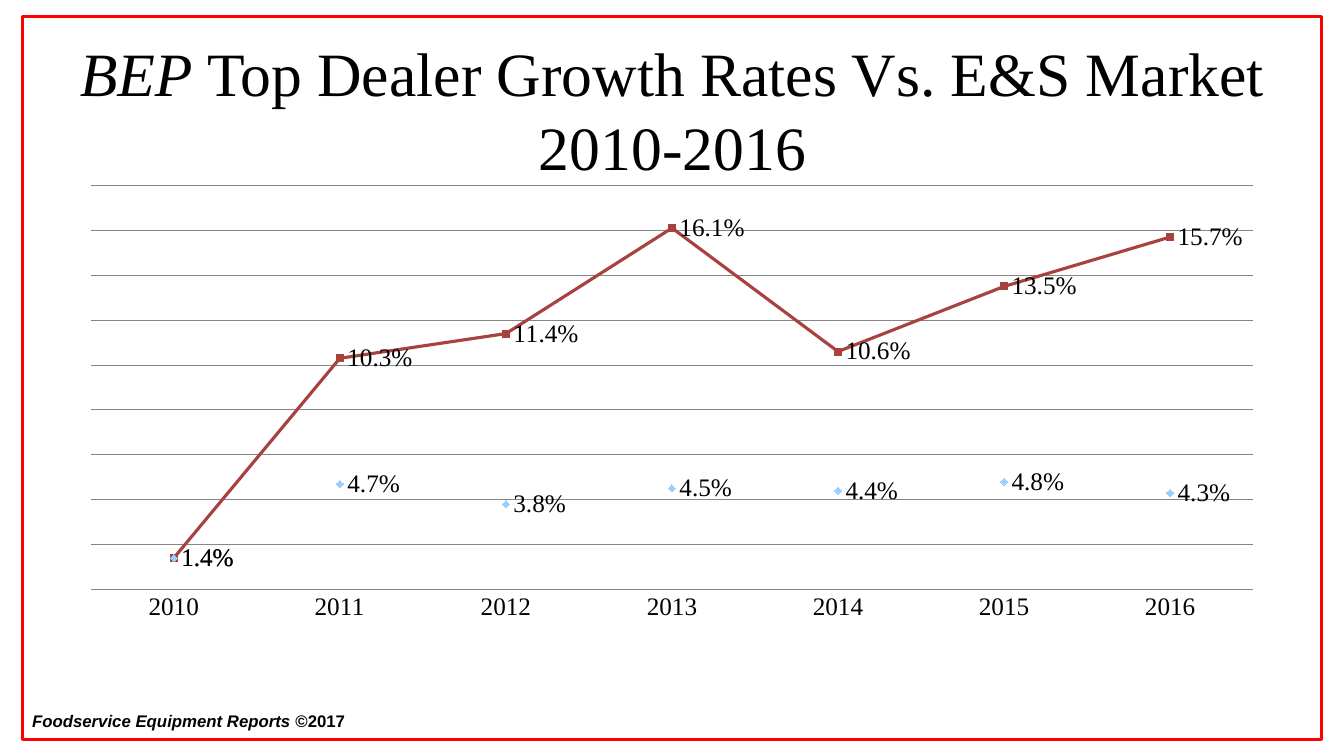
from dataclasses import dataclass

from pptx import Presentation
from pptx.chart.data import CategoryChartData
from pptx.dml.color import RGBColor
from pptx.enum.chart import XL_CHART_TYPE, XL_LABEL_POSITION, XL_MARKER_STYLE, XL_TICK_MARK
from pptx.enum.shapes import MSO_SHAPE
from pptx.enum.text import MSO_ANCHOR, MSO_AUTO_SIZE, PP_ALIGN
from pptx.oxml import parse_xml
from pptx.oxml.ns import nsdecls
from pptx.util import Inches, Pt


@dataclass(frozen=True)
class Theme:
    serif: str = "Times New Roman"
    sans: str = "Arial"
    text: RGBColor = RGBColor(0x00, 0x00, 0x00)
    frame: RGBColor = RGBColor(0xFF, 0x00, 0x00)
    grid: RGBColor = RGBColor(0x86, 0x86, 0x86)
    dealers: RGBColor = RGBColor(0xA8, 0x42, 0x3F)
    market: RGBColor = RGBColor(0x99, 0xCC, 0xFF)
    title_size: int = 44
    chart_size: int = 18
    footer_size: int = 12


class SlideBuilder:
    """Add styled elements to one slide."""

    def __init__(self, prs, theme):
        self.theme = theme
        self.slide = prs.slides.add_slide(prs.slide_layouts[5])

    def style_font(self, font, name, size):
        font.name = name
        font.size = Pt(size)
        font.color.rgb = self.theme.text

    def add_runs(self, p, runs, name, size, bold=False):
        for text, italic in runs:
            r = p.add_run()
            r.text = text
            self.style_font(r.font, name, size)
            r.font.bold = bold
            r.font.italic = italic

    def title(self, box, runs):
        sp = self.slide.shapes.title
        sp.left, sp.top, sp.width, sp.height = map(Inches, box)
        tf = sp.text_frame
        tf.auto_size = MSO_AUTO_SIZE.NONE
        tf.word_wrap = True
        tf.vertical_anchor = MSO_ANCHOR.TOP
        tf.margin_left = tf.margin_right = 0
        tf.margin_top = Inches(0.05)
        p = tf.paragraphs[0]
        p.alignment = PP_ALIGN.CENTER
        self.add_runs(p, runs, self.theme.serif, self.theme.title_size)

    def footer(self, box, runs):
        tf = self.slide.shapes.add_textbox(*map(Inches, box)).text_frame
        tf.word_wrap = True
        self.add_runs(tf.paragraphs[0], runs, self.theme.sans, self.theme.footer_size, bold=True)

    def frame(self, box):
        sp = self.slide.shapes.add_shape(MSO_SHAPE.RECTANGLE, *map(Inches, box))
        sp.shadow.inherit = False
        sp.fill.background()
        sp.line.color.rgb = self.theme.frame
        sp.line.width = Pt(2)

    def line_chart(self, box, plot_box, categories, series):
        data = CategoryChartData(number_format="0.0%")
        data.categories = categories
        for name, values, *_ in series:
            data.add_series(name, values)
        chart = self.slide.shapes.add_chart(
            XL_CHART_TYPE.LINE_MARKERS, *map(Inches, box), data).chart
        chart.has_legend = False
        chart.has_title = False
        self.style_font(chart.font, self.theme.serif, self.theme.chart_size)
        self.style_axes(chart)
        self.place_plot(chart, box, plot_box)

        plot = chart.plots[0]
        plot.vary_by_categories = False
        for ser, (_, _, color, marker, joined) in zip(plot.series, series):
            self.style_series(ser, color, marker, joined)

    def style_axes(self, chart):
        cat, val = chart.category_axis, chart.value_axis
        cat.major_tick_mark = cat.minor_tick_mark = XL_TICK_MARK.NONE
        val.visible = False
        val.minimum_scale, val.maximum_scale, val.major_unit = 0, 0.18, 0.02
        val.tick_labels.number_format = "0.0%"
        val.tick_labels.number_format_is_linked = False
        val.has_major_gridlines = True
        for line in (cat.format.line, val.major_gridlines.format.line):
            line.color.rgb = self.theme.grid
            line.width = Pt(0.75)

    def place_plot(self, chart, box, plot_box):
        left, top, width, height = box
        x, y, w, h = plot_box
        parts = {"x": (x - left) / width, "y": (y - top) / height,
                 "w": w / width, "h": h / height}
        modes = '<c:xMode val="edge"/><c:yMode val="edge"/>'
        sizes = "".join(f'<c:{key} val="{value:.4f}"/>' for key, value in parts.items())
        area = chart.plots[0]._element.getparent()
        for layout in area.xpath("c:layout"):
            area.remove(layout)
        area.insert(0, parse_xml(
            f'<c:layout {nsdecls("c")}><c:manualLayout><c:layoutTarget val="inner"/>'
            f'{modes}{sizes}</c:manualLayout></c:layout>'))

    def style_series(self, ser, color, marker, joined):
        ser.smooth = False
        if joined:
            ser.format.line.color.rgb = color
            ser.format.line.width = Pt(2.25)
        else:
            ser.format.line.fill.background()
        ser.marker.style = marker
        ser.marker.size = 5
        ser.marker.format.fill.solid()
        ser.marker.format.fill.fore_color.rgb = color
        ser.marker.format.line.color.rgb = color
        labels = ser.data_labels
        labels.show_value = True
        labels.position = XL_LABEL_POSITION.RIGHT
        labels.number_format = "0.0%"
        labels.number_format_is_linked = False
        self.style_font(labels.font, self.theme.serif, self.theme.chart_size)


def main():
    prs = Presentation()
    prs.slide_width, prs.slide_height = Inches(13.33), Inches(7.5)
    theme = Theme()
    s = SlideBuilder(prs, theme)
    s.footer((0.22, 7, 7.11, 0.3), [("Foodservice Equipment Reports ", True), ("©2017", False)])
    s.frame((0.22, 0.16, 12.89, 7.18))
    s.title((0.67, 0.3, 12, 1.25),
            [("BEP", True), (" Top Dealer Growth Rates Vs. E&S Market 2010-2016", False)])
    s.line_chart(
        (0.67, 1.75, 12, 4.5), (0.9, 1.84, 11.53, 4.01),
        [str(year) for year in range(2010, 2017)],
        [("Series 1", (0.014, 0.103, 0.114, 0.161, 0.106, 0.135, 0.157),
          theme.dealers, XL_MARKER_STYLE.SQUARE, True),
         ("Series 2", (0.014, 0.047, 0.038, 0.045, 0.044, 0.048, 0.043),
          theme.market, XL_MARKER_STYLE.DIAMOND, False)])
    prs.save("out.pptx")


if __name__ == "__main__":
    main()
